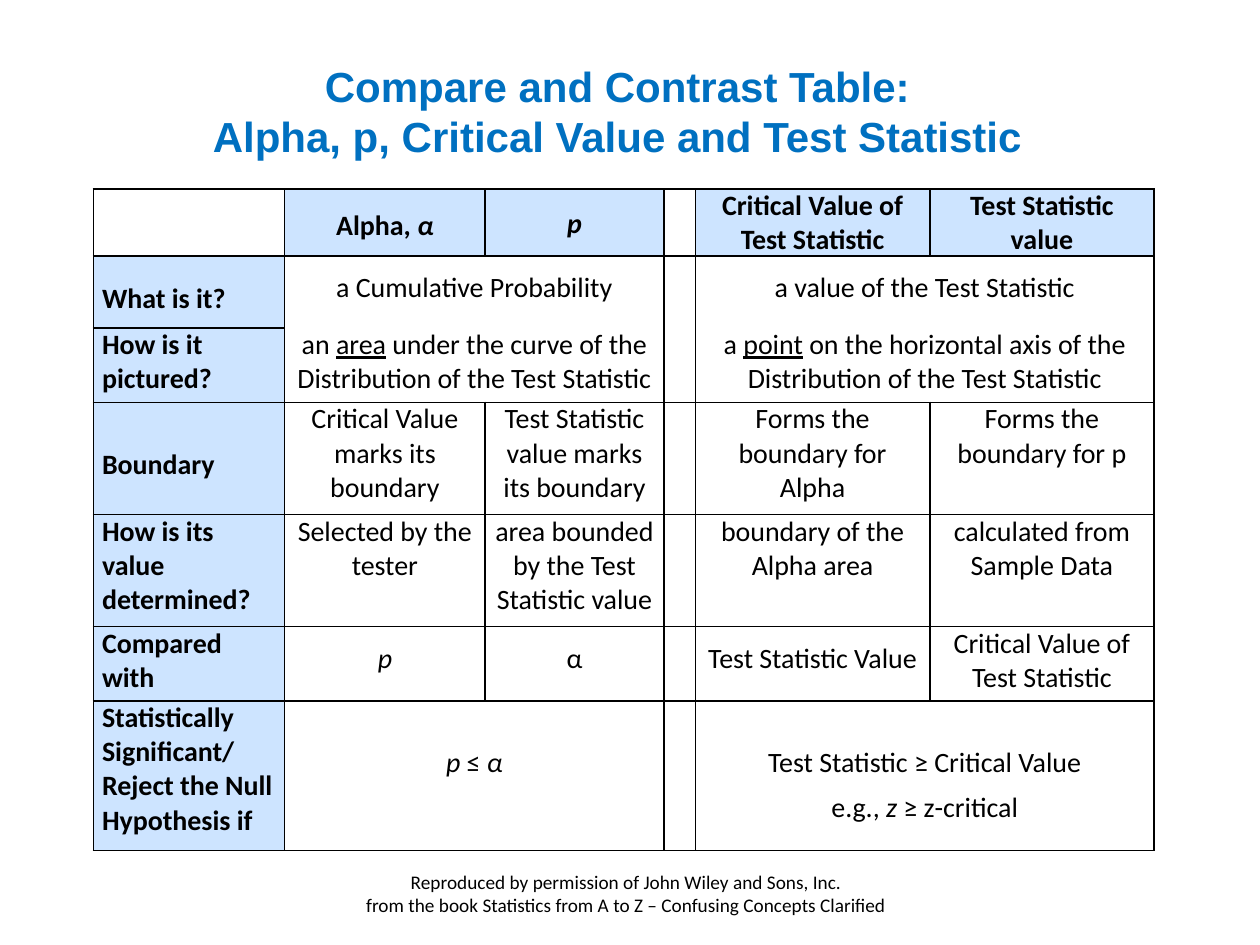
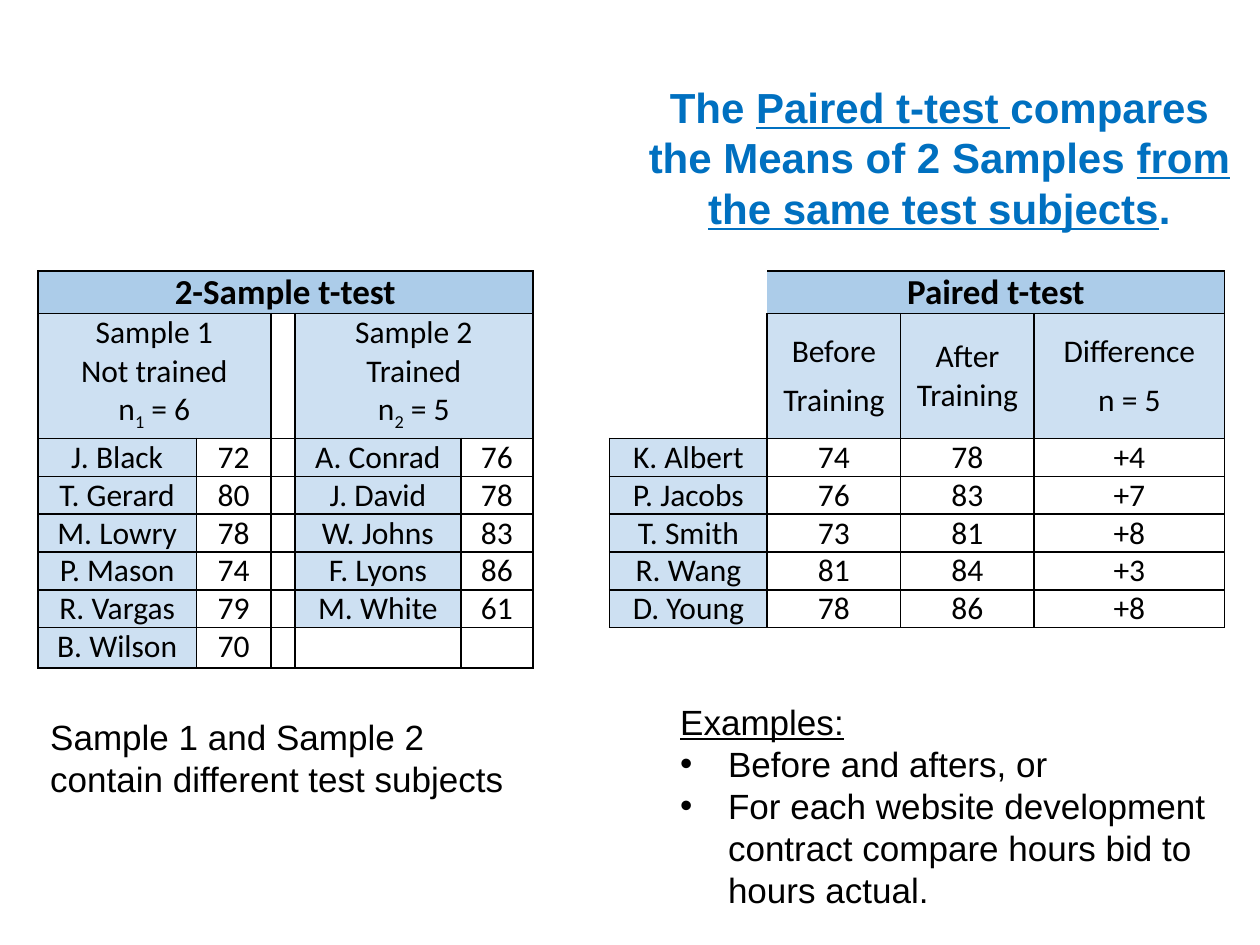
import pptx
import pptx.dml.color
import pptx.enum.text
import pptx.oxml.ns
import pptx.util
from lxml import etree

Inches, Pt = pptx.util.Inches, pptx.util.Pt
RGB = pptx.dml.color.RGBColor
ALIGN, ANCHOR = pptx.enum.text.PP_ALIGN, pptx.enum.text.MSO_ANCHOR
qn = pptx.oxml.ns.qn

TITLE_BLUE = RGB(0x00, 0x70, 0xC0)
BLACK = RGB(0x00, 0x00, 0x00)
LABEL_BLUE = RGB(0x07, 0x7A, 0xFF)
HEAD_BLUE = RGB(0x5B, 0x9B, 0xD5)
NAME_BLUE = RGB(0x9D, 0xC3, 0xE6)
PLAIN_TABLE = "{2D5ABB26-0587-4C30-8999-92F81FD0307C}"
SIDES = {"L": (0, -1), "R": (0, 1), "T": (-1, 0), "B": (1, 0)}

ITALIC, UNDER, SUB = {"i": True}, {"u": True}, {"sub": True}

COMPARE_ROWS = [
    ["", [("Alpha, ", {}), ("α", ITALIC)], [("p", ITALIC)], "",
     "Critical Value of Test Statistic", "Test Statistic value"],
    ["What is it?", "a Cumulative Probability", "", "", "a value of the Test Statistic", ""],
    ["",
     [("an ", {}), ("area", UNDER), (" under the curve of the Distribution of the Test Statistic", {})],
     "", "",
     [("a ", {}), ("point", UNDER), (" on the horizontal axis of the Distribution of the Test Statistic", {})],
     ""],
    ["How is it pictured?", "", "", "", "", ""],
    ["Boundary", "Critical Value marks its boundary", "Test Statistic value marks its boundary", "",
     "Forms the boundary for Alpha", "Forms the boundary for p"],
    ["How is its value determined?", "Selected by the tester",
     "area bounded by the Test Statistic value", "",
     "boundary of the Alpha area", "calculated from Sample Data"],
    ["Compared with", [("p", ITALIC)], "α", "",
     "Test Statistic Value", "Critical Value of Test Statistic"],
    ["Statistically Significant/ Reject the Null Hypothesis if",
     [("p", ITALIC), (" ≤ ", {}), ("α", ITALIC)], "", "",
     ("Test Statistic ≥ Critical Value", [("e.g., ", {}), ("z", ITALIC), (" ≥ z-critical", {})]), ""],
]
COMPARE_TOPS = {(0, 1): 0.16, (0, 2): 0.14, (1, 0): 0.2, (1, 1): 0.12, (1, 4): 0.12, (4, 0): 0.36,
                (6, 1): 0.12, (6, 2): 0.12, (6, 4): 0.12, (7, 1): 0.36, (7, 4): 0.36}

SAMPLE_1 = [("J. Black", 72), ("T. Gerard", 80), ("M. Lowry", 78),
            ("P. Mason", 74), ("R. Vargas", 79), ("B. Wilson", 70)]
SAMPLE_2 = [("A. Conrad", 76), ("J. David", 78), ("W. Johns", 83), ("F. Lyons", 86), ("M. White", 61)]
PAIRED = [("K. Albert", 74, 78), ("P. Jacobs", 76, 83), ("T. Smith", 73, 81),
          ("R. Wang", 81, 84), ("D. Young", 78, 86)]


def put_text(tf, paras, size, font="Calibri", color=BLACK, bold=False,
             align=ALIGN.CENTER, gap=0, bullets_from=None):
    """Fill a text frame with paragraphs, each a string or a list of (text, format) runs."""
    tf.word_wrap = True
    for n, runs in enumerate(paras):
        p = tf.paragraphs[0] if n == 0 else tf.add_paragraph()
        p.alignment = align
        if n:
            p.space_before = Pt(gap)
        p.space_after = Pt(gap if n < len(paras) - 1 else 0)
        if bullets_from is not None and n >= bullets_from:
            pPr = p._p.get_or_add_pPr()
            pPr.set("marL", str(Inches(0.38)))
            pPr.set("indent", str(-Inches(0.38)))
            etree.SubElement(pPr, qn("a:buFont")).set("typeface", "Arial")
            etree.SubElement(pPr, qn("a:buChar")).set("char", "•")
        for text, fmt in [(runs, {})] if isinstance(runs, str) else runs:
            r = p.add_run()
            r.text = text
            f = r.font
            f.name, f.size, f.bold, f.color.rgb = font, Pt(size), bold, color
            f.italic, f.underline = fmt.get("i", False), fmt.get("u", False)
            if fmt.get("sub"):
                r._r.get_or_add_rPr().set("baseline", "-25000")


def add_text(s, box, paras, size, anchor=ANCHOR.TOP, **fmt):
    """Add a text box in the given (left, top, width, height)."""
    tf = s.shapes.add_textbox(*map(Inches, box)).text_frame
    tf.vertical_anchor = anchor
    put_text(tf, paras, size, **fmt)


def add_title(s, box, paras):
    """Add a title in the shared style."""
    add_text(s, box, paras, 24, ANCHOR.MIDDLE, font="Arial", color=TITLE_BLUE, bold=True)


def add_grid(s, left, top, widths, heights, spans, boxed, open_edges):
    """Add a plain table with black lines around the boxed cells, except on open edges."""
    t = s.shapes.add_table(len(heights), len(widths), Inches(left), Inches(top),
                           Inches(sum(widths)), Inches(sum(heights))).table
    t.first_row = t.horz_banding = False
    t._tbl.tblPr.find(qn("a:tableStyleId")).text = PLAIN_TABLE
    for col, width in zip(t.columns, widths):
        col.width = Inches(width)
    for r, height in enumerate(heights):
        t.rows[r].height = Inches(height)
        for c in range(len(widths)):
            cell = t.cell(r, c)
            cell.margin_left = cell.margin_right = Inches(0.07)
            cell.margin_top = cell.margin_bottom = 0
            for side, (dr, dc) in SIDES.items():
                lined = boxed(r, c) or boxed(r + dr, c + dc)
                add_border(cell, side, lined and (r, c, side) not in open_edges)
            cell.fill.background()
    for r1, c1, r2, c2 in spans:
        t.cell(r1, c1).merge(t.cell(r2, c2))
    return t


def add_border(cell, side, lined):
    """Draw one side of a cell, or leave it without a line."""
    ln = etree.SubElement(cell._tc.get_or_add_tcPr(), qn("a:ln" + side), w=str(Pt(1)))
    fill = etree.SubElement(ln, qn("a:solidFill" if lined else "a:noFill"))
    if lined:
        etree.SubElement(fill, qn("a:srgbClr"), val=str(BLACK))


def tint(cell, color, percent):
    """Fill a cell with a partly transparent colour."""
    cell.fill.solid()
    cell.fill.fore_color.rgb = color
    clr = cell._tc.tcPr.find(qn("a:solidFill")).find(qn("a:srgbClr"))
    etree.SubElement(clr, qn("a:alpha"), val=str(percent * 1000))


def compare_table(s, left, top):
    """Place the table that compares the four concepts."""
    spans = [(r, c, r, c + 1) for r in (1, 7) for c in (1, 4)]
    spans += [(1, 0, 2, 0), (2, 1, 3, 2), (2, 3, 3, 3), (2, 4, 3, 5)]
    open_edges = {(r, c, side) for r, side in ((1, "B"), (2, "T")) for c in range(1, 6)}
    t = add_grid(s, left, top, [1.52, 1.59, 1.42, 0.25, 1.86, 1.78],
                 [0.53, 0.57, 0, 0.59, 0.89, 0.89, 0.59, 1.19],
                 spans, lambda r, c: True, open_edges)
    for r, row in enumerate(COMPARE_ROWS):
        for c, content in enumerate(row):
            cell = t.cell(r, c)
            is_label = (r == 0) != (c == 0) and c != 3
            if is_label:
                tint(cell, LABEL_BLUE, 20)
            cell.margin_top = Inches(COMPARE_TOPS.get((r, c), 0))
            if content:
                paras = content if isinstance(content, tuple) else [content]
                put_text(cell.text_frame, paras, 16, bold=is_label, gap=3,
                         align=ALIGN.CENTER if c else ALIGN.LEFT)


def t_test_table(s, left, top):
    """Place the two t-test data sets side by side in one table."""
    def boxed(r, c):
        return c < 5 or (c == 6 and 2 <= r <= 6) or (c > 6 and r < 7)

    t = add_grid(s, left, top, [1.26, 0.59, 0.19, 1.32, 0.57, 0.61, 1.25, 1.06, 1.06, 1.51],
                 [0.34, 0.99] + [0.3] * 5 + [0.32],
                 [(0, 0, 0, 4), (0, 7, 0, 9), (1, 0, 1, 1), (1, 3, 1, 4)],
                 boxed, {(0, 6, "R"), (0, 7, "L")})

    def put(r, c, *paras, color=None, size=18, **fmt):
        cell = t.cell(r, c)
        if color is not None:
            tint(cell, color, 50)
        put_text(cell.text_frame, paras, size, **fmt)
        return cell

    for c, name in ((0, "2-Sample t-test"), (7, "Paired t-test")):
        put(0, c, name, color=HEAD_BLUE, size=20, bold=True)
    samples = ((0, "1", "Not trained", SAMPLE_1), (3, "2", "Trained", SAMPLE_2))
    for c, number, group, people in samples:
        count = [("n", {}), (number, SUB), (f" = {len(people)}", {})]
        put(1, c, f"Sample {number}", group, count, color=NAME_BLUE)
        for r, (name, score) in enumerate(people, 2):
            put(r, c, name, color=NAME_BLUE)
            put(r, c + 1, str(score))
    heads = (("Before", "Training"), ("After Training",), ("Difference", f"n = {len(PAIRED)}"))
    for c, paras in enumerate(heads, 7):
        put(1, c, *paras, color=NAME_BLUE, gap=3).vertical_anchor = ANCHOR.MIDDLE
    for r, (name, before, after) in enumerate(PAIRED, 2):
        put(r, 6, name, color=NAME_BLUE)
        for c, text in enumerate((str(before), str(after), f"{after - before:+d}"), 7):
            put(r, c, text)


def compare_slide(s):
    """Build the compare and contrast slide."""
    add_title(s, (0.73, 0.42, 8.34, 0.92),
              ["Compare and Contrast Table:", "Alpha, p, Critical Value and Test Statistic"])
    compare_table(s, 0.74, 1.5)
    add_text(s, (2.31, 6.86, 5.32, 0.47),
             ["Reproduced by permission of John Wiley and Sons, Inc.",
              "from the book Statistics from A to Z – Confusing Concepts Clarified"], 11)


def t_test_slide(s):
    """Build the slide on the two kinds of t-test."""
    add_title(s, (5, 0.59, 4.91, 1.31),
              [[("The ", {}), ("Paired t-test ", UNDER), ("compares the Means of 2 Samples ", {}),
                ("from the same test subjects", UNDER), (".", {})]])
    t_test_table(s, 0.3, 2.15)
    notes = {"font": "Arial", "align": ALIGN.LEFT}
    add_text(s, (0.3, 5.63, 3.98, 0.77),
             ["Sample 1 and Sample 2 contain different test subjects"], 20, **notes)
    add_text(s, (5.3, 5.51, 4.7, 1.78),
             [[("Examples:", UNDER)], "Before and afters, or",
              "For each website development contract compare hours bid to hours actual."],
             20, bullets_from=1, **notes)


def main():
    """Build and save the presentation."""
    prs = pptx.Presentation()
    prs.slide_width, prs.slide_height = Inches(10), Inches(7.5)
    for build in (compare_slide, t_test_slide):
        build(prs.slides.add_slide(prs.slide_layouts[6]))
    prs.save("out.pptx")


if __name__ == "__main__":
    main()
